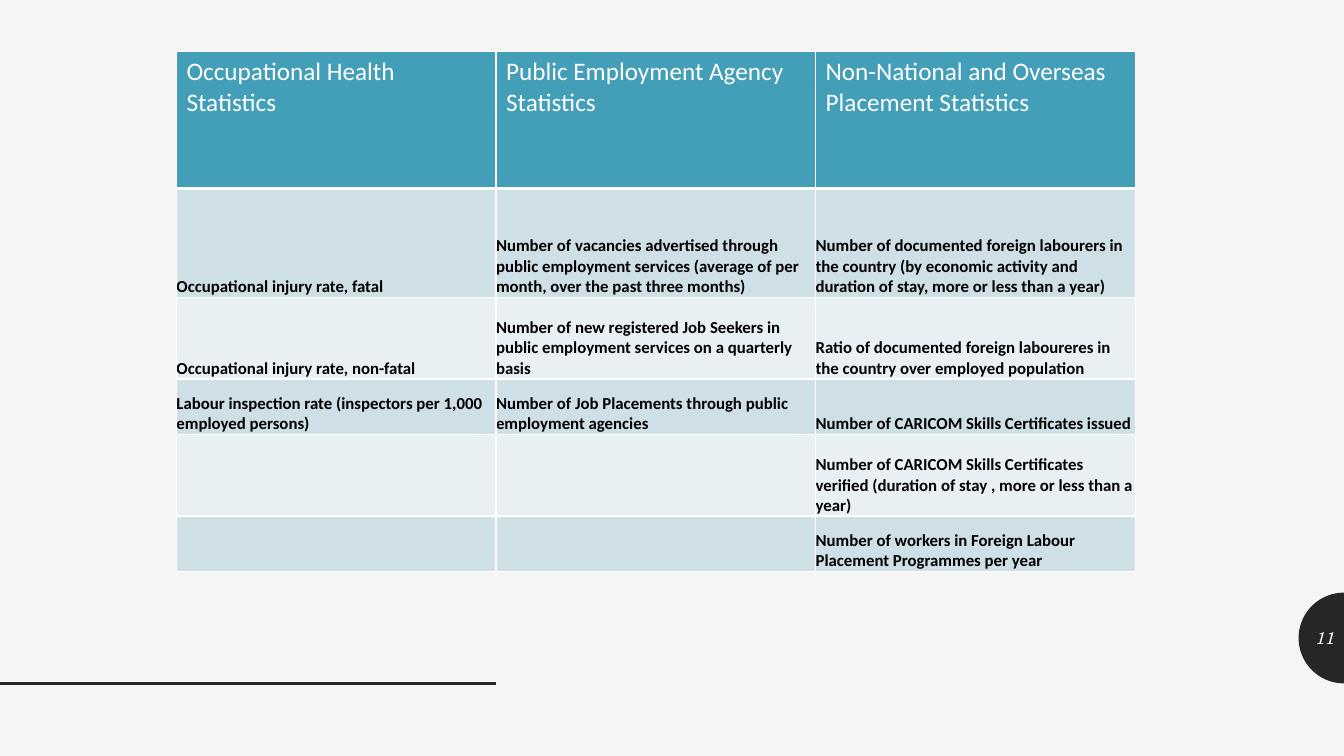
from dataclasses import dataclass
from math import cos, pi, sin

from lxml.etree import SubElement
from pptx import Presentation
from pptx.dml.color import RGBColor
from pptx.enum.shapes import MSO_CONNECTOR
from pptx.enum.text import MSO_ANCHOR, PP_ALIGN
from pptx.oxml import parse_xml
from pptx.oxml.ns import nsdecls, qn
from pptx.slide import Slide
from pptx.table import _Cell
from pptx.util import Inches, Pt


@dataclass(frozen=True)
class Theme:
    background: str = "F5F5F5"
    dark: str = "262626"
    header: str = "439EB7"
    bands: tuple[str, str] = ("CFDFE6", "E9F0F3")
    white: str = "FFFFFF"
    black: str = "000000"
    body_font: str = "Calibri"
    number_font: str = "TeX Gyre Schola"
    header_size: int = 18
    body_size: int = 12
    grid_width: int = 1
    header_rule_width: int = 3


@dataclass(frozen=True)
class IndicatorRow:
    height: float
    health: str = ""
    employment: str = ""
    placement: str = ""

    @property
    def texts(self) -> tuple[str, str, str]:
        return self.health, self.employment, self.placement


THEME = Theme()
COLUMN_WIDTH = 3.17
DISC_CENTER = (13.33, 6.33)
DISC_RADIUS = 0.45
DISC_STEPS = 48

ROWS = [
    IndicatorRow(
        1.36,
        "Occupational Health Statistics",
        "Public Employment Agency Statistics",
        "Non-National and Overseas Placement Statistics",
    ),
    IndicatorRow(
        1.08,
        "Occupational injury rate, fatal",
        "Number of vacancies advertised through public employment services "
        "(average of per month, over the past three months)",
        "Number of documented foreign labourers in the country "
        "(by economic activity and duration of stay, more or less than a year)",
    ),
    IndicatorRow(
        0.81,
        "Occupational injury rate, non-fatal",
        "Number of new registered Job Seekers in public employment services on a quarterly basis",
        "Ratio of documented foreign laboureres in the country over employed population",
    ),
    IndicatorRow(
        0.55,
        "Labour inspection rate (inspectors per 1,000 employed persons)",
        "Number of Job Placements through public employment agencies",
        "Number of CARICOM Skills Certificates issued",
    ),
    IndicatorRow(
        0.81,
        placement="Number of CARICOM Skills Certificates verified "
        "(duration of stay , more or less than a year)",
    ),
    IndicatorRow(
        0.55,
        placement="Number of workers in Foreign Labour Placement Programmes per year",
    ),
]


def color(value: str) -> RGBColor:
    return RGBColor.from_string(value)


def set_borders(cell: _Cell, bottom_width: int) -> None:
    """Insert the four borders ahead of the cell's fill, as the schema requires."""
    widths = {"lnL": THEME.grid_width, "lnR": THEME.grid_width,
              "lnT": THEME.grid_width, "lnB": bottom_width}
    properties = cell._tc.get_or_add_tcPr()
    for position, (side, width) in enumerate(widths.items()):
        properties.insert(position, parse_xml(
            f'<a:{side} {nsdecls("a")} w="{Pt(width)}"><a:solidFill>'
            f'<a:srgbClr val="{THEME.white}"/></a:solidFill></a:{side}>'
        ))


def style_cell(cell: _Cell, text: str, row_index: int) -> None:
    is_header = row_index == 0
    cell.text = text
    cell.fill.solid()
    cell.fill.fore_color.rgb = color(
        THEME.header if is_header else THEME.bands[(row_index - 1) % 2]
    )
    font = cell.text_frame.paragraphs[0].font
    font.name = THEME.body_font
    font.size = Pt(THEME.header_size if is_header else THEME.body_size)
    font.bold = not is_header
    font.color.rgb = color(THEME.white if is_header else THEME.black)
    if not is_header:
        cell.vertical_anchor = MSO_ANCHOR.BOTTOM
        cell.margin_left = cell.margin_right = cell.margin_top = cell.margin_bottom = 0
    set_borders(cell, THEME.header_rule_width if is_header else THEME.grid_width)


def add_indicator_table(slide: Slide) -> None:
    columns = len(ROWS[0].texts)
    table = slide.shapes.add_table(
        len(ROWS), columns, Inches(1.75), Inches(0.51),
        Inches(COLUMN_WIDTH * columns), Inches(sum(row.height for row in ROWS)),
    ).table
    for column in table.columns:
        column.width = Inches(COLUMN_WIDTH)
    for row_index, row in enumerate(ROWS):
        table.rows[row_index].height = Inches(row.height)
        for column_index, text in enumerate(row.texts):
            style_cell(table.cell(row_index, column_index), text, row_index)


def add_half_disc(slide: Slide) -> None:
    center_x, center_y = DISC_CENTER
    angles = [pi * step / DISC_STEPS for step in range(DISC_STEPS + 1)]
    points = [
        (Inches(center_x - DISC_RADIUS * sin(angle)),
         Inches(center_y - DISC_RADIUS * cos(angle)))
        for angle in angles
    ]
    builder = slide.shapes.build_freeform(*points[0])
    builder.add_line_segments(points[1:], close=True)
    half_disc = builder.convert_to_shape()
    half_disc.shadow.inherit = False
    half_disc.fill.solid()
    half_disc.fill.fore_color.rgb = color(THEME.dark)
    half_disc.line.fill.background()


def add_footer_rule(slide: Slide) -> None:
    rule = slide.shapes.add_connector(
        MSO_CONNECTOR.STRAIGHT, 0, Inches(6.78), Inches(4.92), Inches(6.78)
    )
    rule.line.color.rgb = color(THEME.dark)
    rule.line.width = Pt(2)
    SubElement(rule._element.spPr, qn("a:effectLst"))


def add_page_number(slide: Slide) -> None:
    frame = slide.shapes.add_textbox(
        Inches(12.89), Inches(6.13), Inches(0.45), Inches(0.4)
    ).text_frame
    frame.word_wrap = True
    frame.vertical_anchor = MSO_ANCHOR.MIDDLE
    number = frame.paragraphs[0]
    number.text = "11"
    number.alignment = PP_ALIGN.RIGHT
    number.font.name = THEME.number_font
    number.font.size = Pt(THEME.body_size)
    number.font.italic = True
    number.font.color.rgb = color(THEME.background)


def main() -> None:
    presentation = Presentation()
    presentation.slide_width = Inches(13.33)
    presentation.slide_height = Inches(7.5)
    slide = presentation.slides.add_slide(presentation.slide_layouts[6])
    slide.background.fill.solid()
    slide.background.fill.fore_color.rgb = color(THEME.background)
    add_half_disc(slide)
    add_footer_rule(slide)
    add_page_number(slide)
    add_indicator_table(slide)
    presentation.save("out.pptx")


if __name__ == "__main__":
    main()
